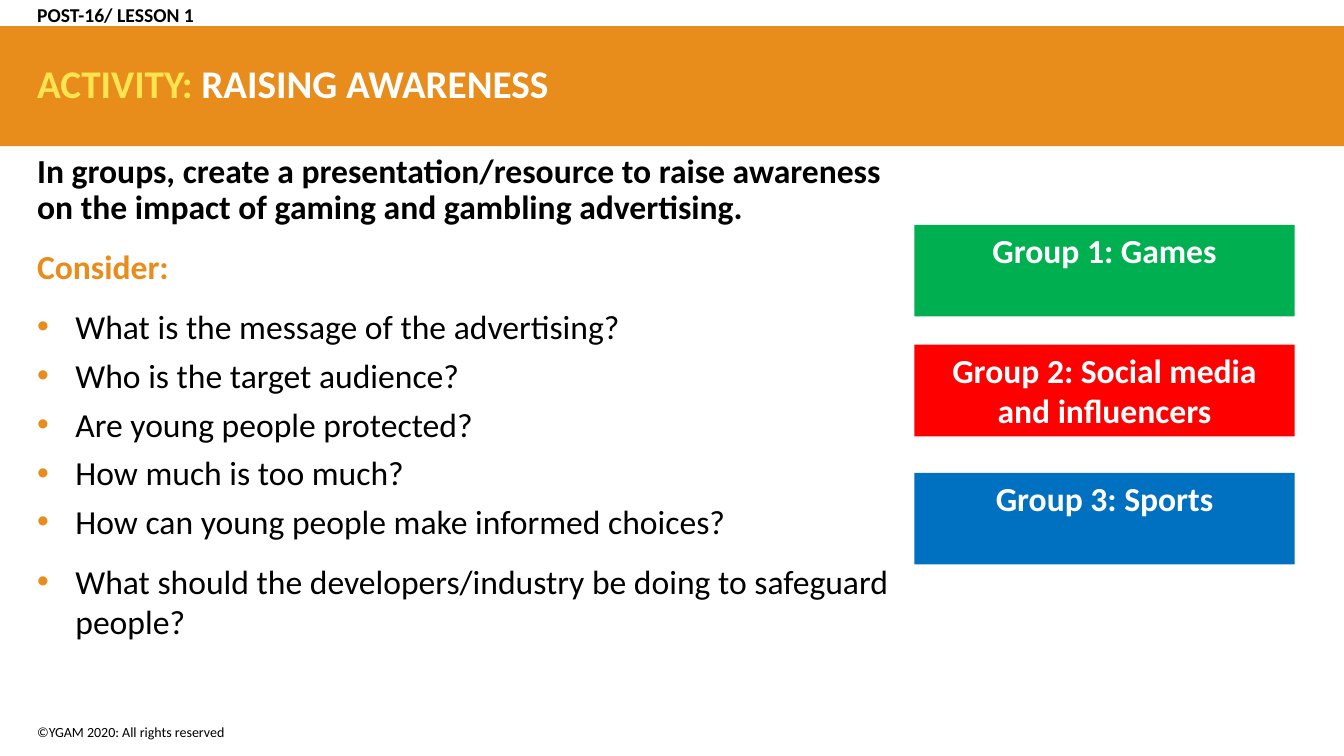
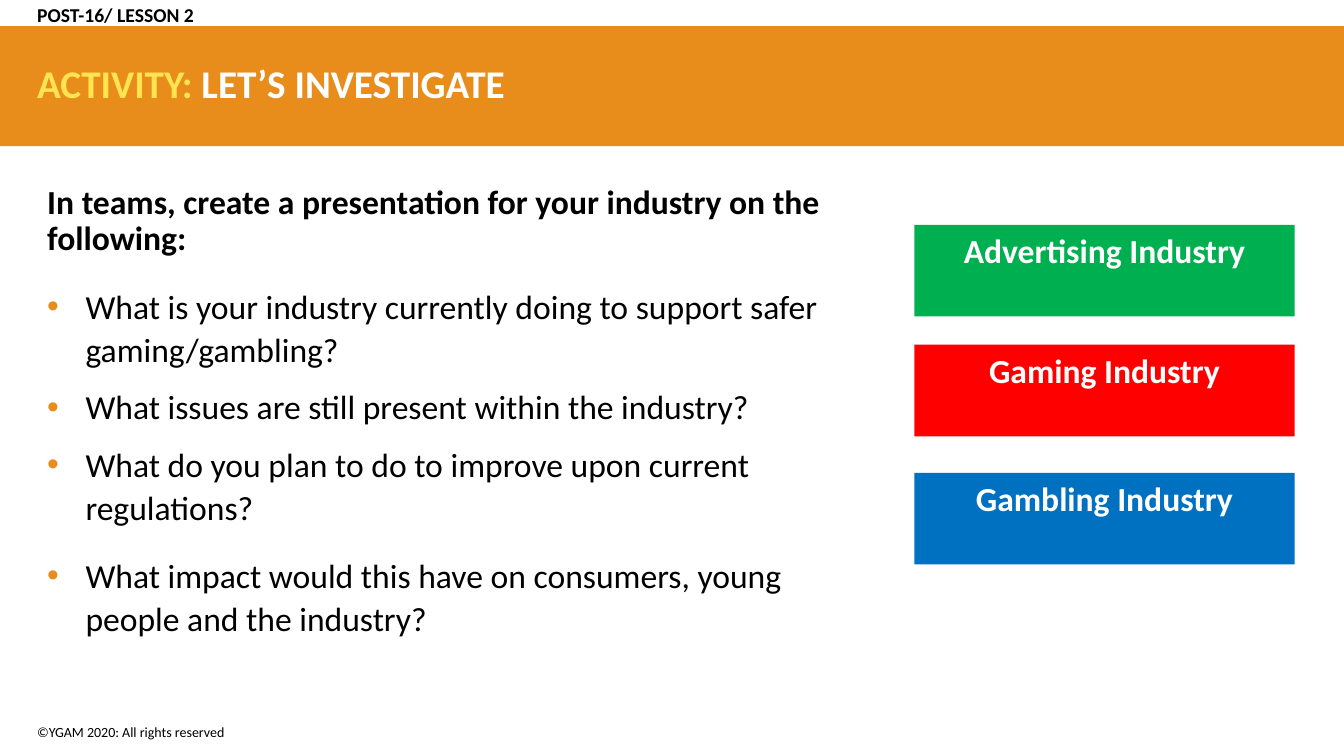
import pptx
import pptx.util
import pptx.dml.color
import pptx.enum.shapes
import pptx.enum.text
import pptx.oxml
import pptx.oxml.ns
from dataclasses import dataclass

SLIDES = [
    {
        "lesson": "POST-16/ LESSON 1",
        "title": "RAISING AWARENESS",
        "task": "In groups, create a presentation/resource to raise awareness "
                "on the impact of gaming and gambling advertising.",
        "lead": "Consider:",
        "points": [
            "What is the message of the advertising?",
            "Who is the target audience?",
            "Are young people protected?",
            "How much is too much?",
            "How can young people make informed choices?",
            "What should the developers/industry be doing to safeguard people?",
        ],
        "teams": ["Group 1: Games", "Group 2: Social media and influencers",
                  "Group 3: Sports"],
        "area": (0.27, 1.48, 8.96, 5.2),
        "before": 6,
        "lines": 1.0,
    },
    {
        "lesson": "POST-16/ LESSON 2",
        "title": "LET’S INVESTIGATE",
        "task": "In teams, create a presentation for your industry on the following:",
        "lead": None,
        "points": [
            "What is your industry currently doing to support safer gaming/gambling?",
            "What issues are still present within the industry?",
            "What do you plan to do to improve upon current regulations?",
            "What impact would this have on consumers, young people and the industry?",
        ],
        "teams": ["Advertising Industry", "Gaming Industry", "Gambling Industry"],
        "area": (0.37, 1.79, 7.93, 5.02),
        "before": 10,
        "lines": 1.07,
    },
]
LABEL = "ACTIVITY: "
FOOTER = "©YGAM 2020: All rights reserved"


@dataclass(frozen=True)
class Theme:
    font: str = "Calibri"
    ink: str = "000000"
    paper: str = "FFFFFF"
    accent: str = "E88C1C"
    label: str = "FFE452"
    teams: tuple = ("00B050", "FF0000", "0070C0")
    title: int = 28
    body: int = 24
    lesson: int = 14
    footer: int = 10


THEME = Theme()
WIDTH, HEIGHT = 13.33, 7.5
LEFT = 0.27
BAND = (0, 0.26, WIDTH, 1.19)
TEAM_LEFT, TEAM_WIDTH, TEAM_HEIGHT = 9.07, 3.77, 0.91
TEAM_TOPS = (2.23, 3.42, 4.69)
HANG = 0.38
GAP = 8
ANCHOR = pptx.enum.text.MSO_ANCHOR


def color(code):
    return pptx.dml.color.RGBColor.from_string(code)


def inches(area):
    return [pptx.util.Inches(n) for n in area]


def add_bar(slide, area, fill):
    bar = slide.shapes.add_shape(pptx.enum.shapes.MSO_SHAPE.RECTANGLE, *inches(area))
    bar.shadow.inherit = False
    bar.fill.solid()
    bar.fill.fore_color.rgb = color(fill)
    bar.line.fill.background()
    return bar


def add_frame(slide, area, anchor=ANCHOR.TOP):
    frame = slide.shapes.add_textbox(*inches(area)).text_frame
    frame.word_wrap = True
    frame.vertical_anchor = anchor
    return frame


def style(para, size, ink=THEME.ink, bold=False, lines=1.0, before=0, after=0):
    para.line_spacing = lines
    para.space_before = pptx.util.Pt(before)
    para.space_after = pptx.util.Pt(after)
    font = para.font
    font.name, font.size, font.bold = THEME.font, pptx.util.Pt(size), bold
    font.color.rgb = color(ink)


def add_bullet(para):
    props = para._p.get_or_add_pPr()
    hang = pptx.util.Inches(HANG)
    props.set("marL", str(hang))
    props.set("indent", str(-hang))
    space = pptx.oxml.ns.nsdecls("a")
    for xml in (f'<a:buClr {space}><a:srgbClr val="{THEME.accent}"/></a:buClr>',
                f'<a:buFont {space} typeface="Arial"/>',
                f'<a:buChar {space} char="•"/>'):
        props.append(pptx.oxml.parse_xml(xml))


def add_base(slide, lesson, title):
    """Draw the band, title, lesson line and footer that all slides share."""
    add_bar(slide, BAND, THEME.accent)

    para = add_frame(slide, (LEFT, 7.13, 5.64, 0.27)).paragraphs[0]
    para.text = FOOTER
    style(para, THEME.footer)

    head = (LEFT, BAND[1], WIDTH - 2 * LEFT, BAND[3])
    para = add_frame(slide, head, ANCHOR.MIDDLE).paragraphs[0]
    style(para, THEME.title, THEME.paper, bold=True, lines=0.9)
    for text, ink in ((LABEL, THEME.label), (title, THEME.paper)):
        run = para.add_run()
        run.text = text
        run.font.color.rgb = color(ink)

    para = add_frame(slide, (LEFT, 0, 5.86, 0.32), ANCHOR.MIDDLE).paragraphs[0]
    para.text = lesson
    style(para, THEME.lesson, bold=True, lines=0.9)


def add_body(slide, data):
    frame = add_frame(slide, data["area"])
    para = frame.paragraphs[0]
    para.text = data["task"]
    style(para, THEME.body, bold=True, lines=0.9, after=GAP)

    rhythm = {"lines": data["lines"], "before": data["before"]}
    if data["lead"]:
        para = frame.add_paragraph()
        para.text = data["lead"]
        style(para, THEME.body, THEME.accent, bold=True, after=GAP, **rhythm)

    # The last two points are set further apart.
    loose = len(data["points"]) - 2
    for i, point in enumerate(data["points"]):
        para = frame.add_paragraph()
        para.text = point
        add_bullet(para)
        style(para, THEME.body, after=GAP if i >= loose else 0, **rhythm)


def add_teams(slide, names):
    for name, top, fill in zip(names, TEAM_TOPS, THEME.teams):
        bar = add_bar(slide, (TEAM_LEFT, top, TEAM_WIDTH, TEAM_HEIGHT), fill)
        frame = bar.text_frame
        frame.word_wrap = True
        frame.vertical_anchor = ANCHOR.TOP
        para = frame.paragraphs[0]
        para.text = name
        para.alignment = pptx.enum.text.PP_ALIGN.CENTER
        style(para, THEME.body, THEME.paper, bold=True)


def main():
    deck = pptx.Presentation()
    deck.slide_width, deck.slide_height = inches((WIDTH, HEIGHT))
    for data in SLIDES:
        slide = deck.slides.add_slide(deck.slide_layouts[6])
        add_base(slide, data["lesson"], data["title"])
        add_body(slide, data)
        add_teams(slide, data["teams"])
    deck.save("out.pptx")


if __name__ == "__main__":
    main()
